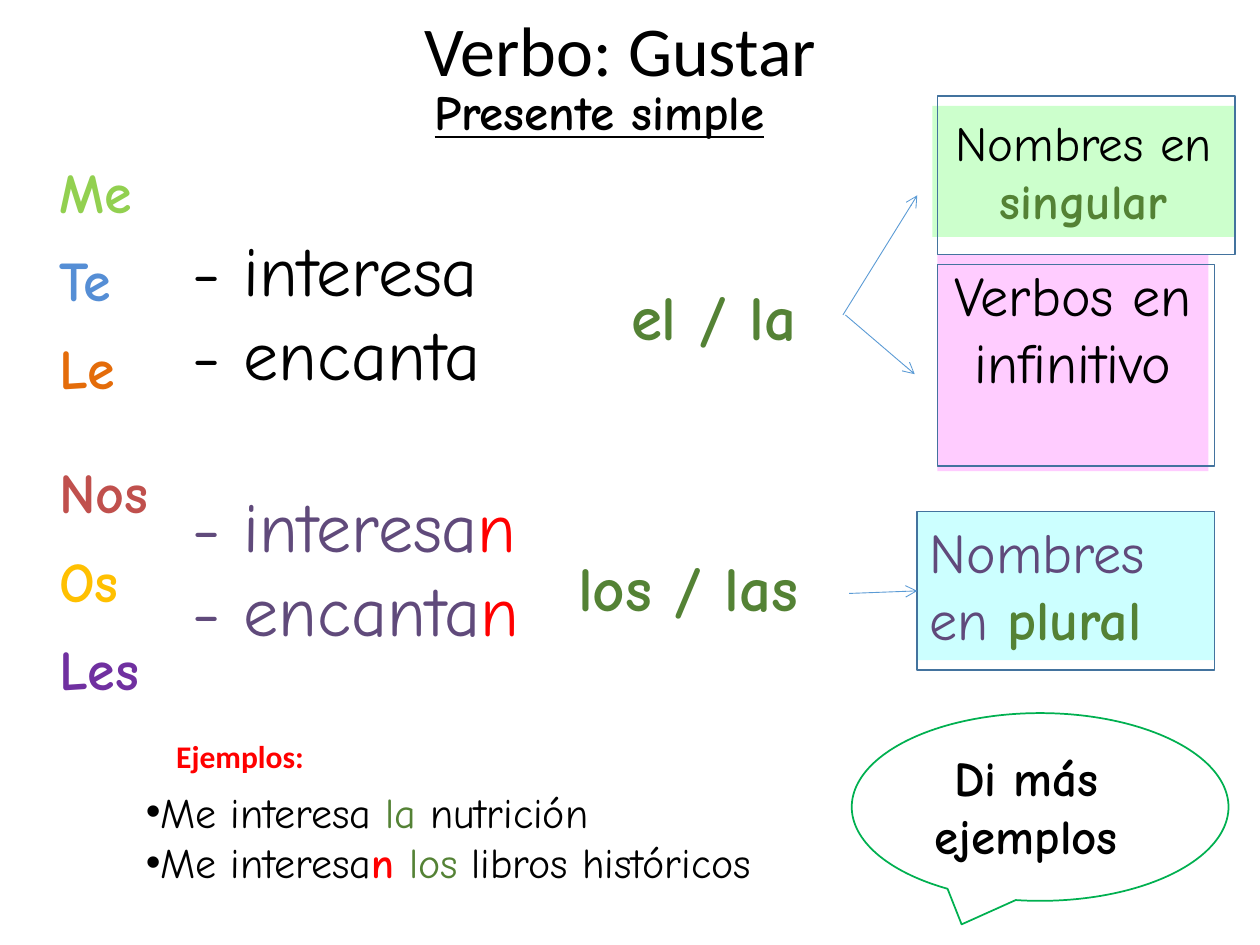
from lxml import etree
from pptx import Presentation
from pptx import util as u
from pptx.dml.color import RGBColor
from pptx.enum import shapes, text
from pptx.oxml import ns

HAND = "Comic Neue"
COLORS = {
    "black": "000000", "red": "FF0000", "green": "548235", "violet": "604A7B",
    "lime": "92D050", "sky": "558ED5", "orange": "E46C0A", "brick": "C0504D",
    "gold": "FFC000", "purple": "7030A0", "mint": "CCFFCC", "pink": "FFCCFF",
    "aqua": "CCFFFF", "frame": "43739E", "arrow": "5B9BD5", "bubble": "00B050",
}


def color(name):
    return RGBColor.from_string(COLORS[name])


def inches(values):
    return [u.Inches(value) for value in values]


def write(shape, paragraphs, size, font=HAND, bold=False, underline=None,
          align=text.PP_ALIGN.LEFT, anchor=text.MSO_ANCHOR.TOP,
          wrap=False, after=0, bullet=False):
    """Fill a shape with paragraphs, each a list of (text, colour[, bold]) runs."""
    frame = shape.text_frame
    frame.word_wrap = wrap
    frame.vertical_anchor = anchor
    frame.auto_size = text.MSO_AUTO_SIZE.SHAPE_TO_FIT_TEXT
    for index, runs in enumerate(paragraphs):
        paragraph = frame.add_paragraph() if index else frame.paragraphs[0]
        paragraph.alignment = align
        paragraph.space_after = u.Pt(after)
        if bullet:
            properties = paragraph._p.get_or_add_pPr()
            properties.set("marL", "0")
            properties.set("indent", "0")
            etree.SubElement(properties, ns.qn("a:buFont"), typeface="Arial")
            etree.SubElement(properties, ns.qn("a:buChar"), char="•")
        for words, shade, *weight in runs:
            run = paragraph.add_run()
            run.text = words
            run.font.name = font
            run.font.size = u.Pt(size)
            run.font.bold = weight[0] if weight else bold
            run.font.underline = underline
            run.font.color.rgb = color(shade)
    return frame


def add_text(slide, box, paragraphs, size, **style):
    return write(slide.shapes.add_textbox(*inches(box)), paragraphs, size, **style)


def add_shape(slide, box, fill=None, line=None, kind=shapes.MSO_SHAPE.RECTANGLE):
    shape = slide.shapes.add_shape(kind, *inches(box))
    shape.shadow.inherit = False
    if fill:
        shape.fill.solid()
        shape.fill.fore_color.rgb = color(fill)
    else:
        shape.fill.background()
    if line:
        shape.line.color.rgb = color(line)
        shape.line.width = u.Pt(1)
    else:
        shape.line.fill.background()
    return shape


def add_arrow(slide, start, end, target=None):
    arrow = slide.shapes.add_connector(
        shapes.MSO_CONNECTOR.STRAIGHT, *inches(start + end))
    if target is not None:
        arrow.end_connect(target, 1)
    arrow.line.color.rgb = color("arrow")
    arrow.line.width = u.Pt(0.5)
    etree.SubElement(arrow.line._get_or_add_ln(), ns.qn("a:tailEnd"), type="arrow")
    etree.SubElement(arrow._element.spPr, ns.qn("a:effectLst"))


def add_title(slide):
    title = slide.shapes.title
    title.left, title.top, title.width, title.height = inches((3.27, 0, 3.47, 0.77))
    write(title, [[("Verbo: Gustar", "black")]], 40, font="Calibri")
    add_text(slide, (3.35, 0.6, 3.15, 0.57), [[("Presente simple", "black")]], 28,
             bold=True, underline=True)


def add_pronouns(slide):
    pronouns = [("Me", "lime"), ("Te", "sky"), ("Le", "orange"),
                ("Nos", "brick"), ("Os", "gold"), ("Les", "purple")]
    frame = add_text(slide, (0.37, 1.2, 1.11, 4.48),
                     [[pronoun] for pronoun in pronouns], 32, bold=True, after=12)
    # The plural group starts a little lower
    frame.paragraphs[3].space_before = u.Pt(20.5)


def add_verbs(slide):
    verbs = ("- interesa", "- encanta")
    add_text(slide, (1.43, 1.75, 2.76, 1.45),
             [[(verb, "black")] for verb in verbs], 40)
    add_text(slide, (1.43, 3.78, 3.06, 1.45),
             [[(verb, "violet"), ("n", "red")] for verb in verbs], 40)


def add_articles(slide):
    for box, words in (((4.91, 2.15, 1.78, 0.71), "el / la"),
                       ((4.49, 4.3, 2.28, 0.71), "los / las")):
        add_text(slide, box, [[(words, "green")]], 36, bold=True, wrap=True)


def add_complements(slide):
    center = text.PP_ALIGN.CENTER
    # Coloured panels with their text
    singular = add_shape(slide, (7.4, 0.84, 2.4, 1.04), fill="mint")
    write(singular, [[("Nombres en ", "black"), ("singular", "green", True)]], 28,
          align=center, wrap=True)
    infinitive = add_shape(slide, (7.44, 2.02, 2.15, 1.72), fill="pink")
    write(infinitive, [[("Verbos en infinitivo", "black")]], 32,
          align=center, wrap=True)
    # Keep the panel taller than its two lines
    infinitive.text_frame.auto_size = text.MSO_AUTO_SIZE.NONE
    plural = add_shape(slide, (7.28, 4.06, 2.36, 1.18), fill="aqua")
    write(plural, [[("Nombres en ", "violet"), ("plural", "green", True)]], 32,
          wrap=True)

    # Frames
    add_shape(slide, (7.44, 0.76, 2.36, 1.26), line="frame")
    add_shape(slide, (7.44, 2.1, 2.2, 1.6), line="frame")
    plural_frame = add_shape(slide, (7.28, 4.06, 2.36, 1.26), line="frame")

    # Arrows from the articles
    add_arrow(slide, (6.69, 2.5), (7.28, 1.55))
    add_arrow(slide, (6.71, 2.5), (7.26, 2.97))
    add_arrow(slide, (6.74, 4.71), (7.28, 4.69), plural_frame)


def add_examples(slide):
    add_text(slide, (1.3, 5.8, 1.28, 0.4), [[("Ejemplos:", "red")]], 18,
             font="Calibri", bold=True)
    examples = [
        [("Me interesa ", "black"), ("la ", "green"), ("nutrición", "black")],
        [("Me interesa", "black"), ("n ", "red", True), ("los", "green"),
         (" libros históricos", "black")],
    ]
    add_text(slide, (1.06, 6.19, 5.65, 0.91), examples, 24, bullet=True)


def add_prompt(slide):
    add_shape(slide, (6.76, 5.66, 2.99, 1.49), line="bubble",
              kind=shapes.MSO_SHAPE.OVAL_CALLOUT)
    add_text(slide, (7.2, 5.88, 1.89, 1.04), [[("Di más ejemplos", "black")]], 28,
             bold=True, align=text.PP_ALIGN.CENTER, wrap=True)


def main():
    presentation = Presentation()
    presentation.slide_width, presentation.slide_height = inches((10, 7.5))
    slide = presentation.slides.add_slide(presentation.slide_layouts[5])
    add_title(slide)
    add_pronouns(slide)
    add_verbs(slide)
    add_articles(slide)
    add_complements(slide)
    add_examples(slide)
    add_prompt(slide)
    presentation.save("out.pptx")


if __name__ == "__main__":
    main()
